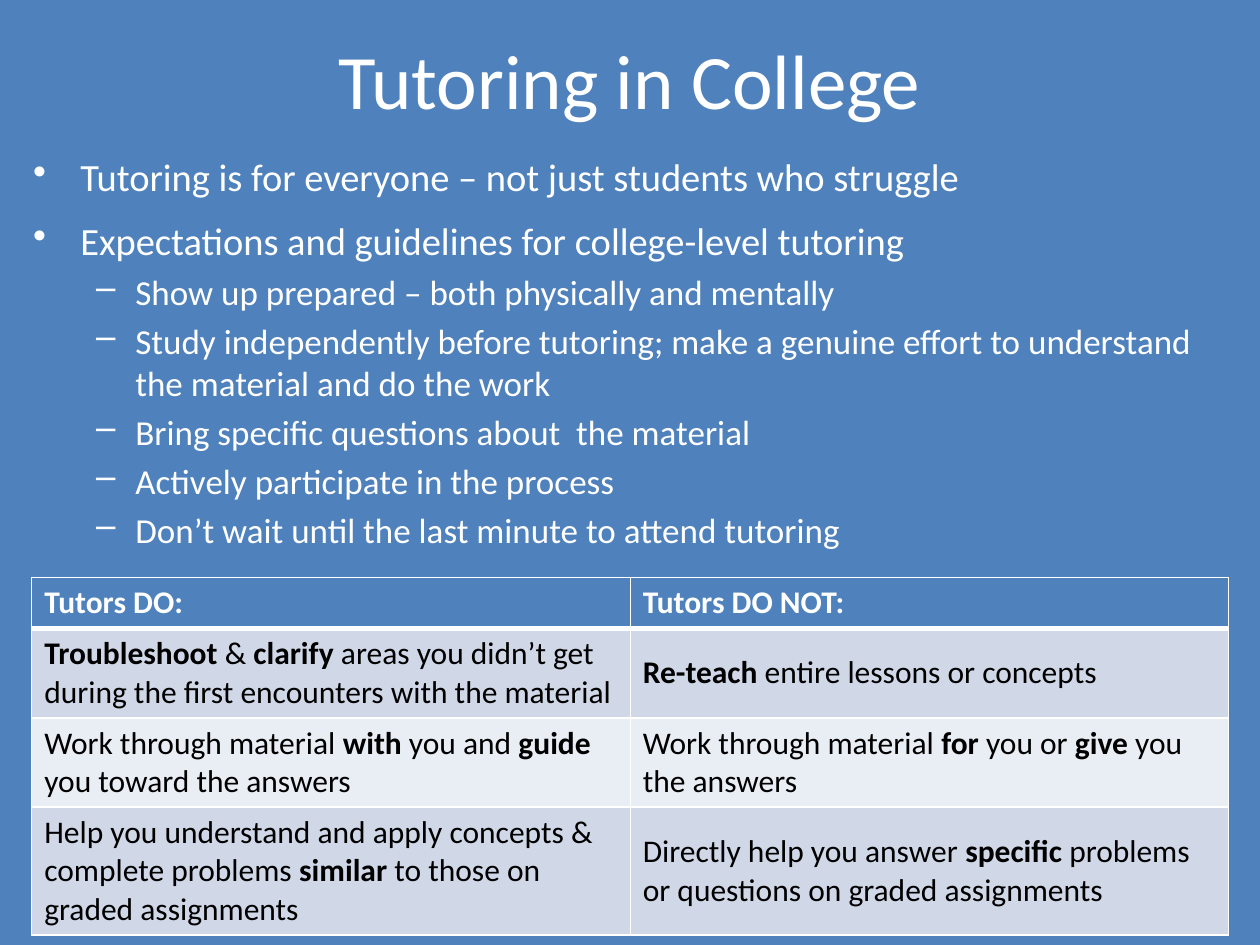
from lxml.etree import SubElement
from pptx import Presentation
from pptx.dml.color import RGBColor
from pptx.enum.text import MSO_ANCHOR, PP_ALIGN
from pptx.oxml.ns import qn
from pptx.util import Cm, Pt

FONT = "Calibri"
BLUE, WHITE, BLACK = "4F81BD", "FFFFFF", "000000"
BANDS = ("D0D8E8", "E9EDF4")

TITLE = "Tutoring in College"
# (level, text, space after in points)
BULLETS = [
    (0, "Tutoring is for everyone – not just students who struggle", 6),
    (0, "Expectations and guidelines for college-level tutoring", 0),
    (1, "Show up prepared – both physically and mentally", 0),
    (1, "Study independently before tutoring; make a genuine effort to "
        "understand the material and do the work", 0),
    (1, "Bring specific questions about  the material", 0),
    (1, "Actively participate in the process", 0),
    (1, "Don’t wait until the last minute to attend tutoring", 0),
]
# (symbol, text size, left margin, hanging indent) for each level
LEVELS = [("•", 22, Cm(0.95), Cm(0.95)), ("–", 20, Cm(2.06), Cm(0.79))]

# Text between asterisks is bold
TABLE = [
    ("*Tutors DO:*", "*Tutors DO NOT:*"),
    ("*Troubleshoot* & *clarify* areas you didn’t get during the first "
     "encounters with the material",
     "*Re-teach* entire lessons or concepts"),
    ("Work through material *with* you and *guide* you toward the answers",
     "Work through material *for* you or *give* you the answers"),
    ("Help you understand and apply concepts & complete problems *similar* "
     "to those on graded assignments",
     "Directly help you answer *specific* problems or questions on graded "
     "assignments"),
]
ROW_HEIGHTS = [Cm(1.03), Cm(1.8), Cm(1.8), Cm(2.58)]


def color(value):
    return RGBColor.from_string(value)


def set_font(paragraph, size, value):
    paragraph.font.name = FONT
    paragraph.font.size = Pt(size)
    paragraph.font.color.rgb = color(value)


def add_text_box(slide, left, top, width, height):
    text_frame = slide.shapes.add_textbox(left, top, width, height).text_frame
    text_frame.word_wrap = True
    return text_frame


def add_title(slide):
    text_frame = add_text_box(slide, Cm(1.27), Cm(0), Cm(22.86), Cm(3.18))
    text_frame.vertical_anchor = MSO_ANCHOR.MIDDLE
    paragraph = text_frame.paragraphs[0]
    paragraph.text = TITLE
    paragraph.alignment = PP_ALIGN.CENTER
    set_font(paragraph, 44, WHITE)


def add_bullets(slide):
    text_frame = add_text_box(slide, Cm(0.42), Cm(2.96), Cm(24.57), Cm(8.89))
    for index, (level, text, space_after) in enumerate(BULLETS):
        symbol, size, margin, hanging = LEVELS[level]
        paragraph = text_frame.add_paragraph() if index else text_frame.paragraphs[0]
        paragraph.text = text
        paragraph.level = level
        paragraph.space_before = Pt(size * 0.2)
        paragraph.space_after = Pt(space_after)
        set_font(paragraph, size, WHITE)
        properties = paragraph._p.get_or_add_pPr()
        properties.set("marL", str(margin))
        properties.set("indent", str(-hanging))
        bullet = properties.makeelement(qn("a:buChar"), {"char": symbol})
        properties.find(qn("a:defRPr")).addprevious(bullet)


def set_borders(cell, widths):
    """Draw white borders; widths maps each side (L, R, T, B) to points."""
    properties = cell._tc.get_or_add_tcPr()
    for position, (side, width) in enumerate(widths.items()):
        line = properties.makeelement(qn(f"a:ln{side}"), {"w": str(Pt(width))})
        fill = SubElement(line, qn("a:solidFill"))
        SubElement(fill, qn("a:srgbClr"), val=WHITE)
        properties.insert(position, line)


def fill_cell(cell, text, row):
    header = row == 0
    cell.fill.solid()
    cell.fill.fore_color.rgb = color(BLUE if header else BANDS[(row - 1) % 2])
    cell.vertical_anchor = MSO_ANCHOR.TOP if header else MSO_ANCHOR.MIDDLE
    paragraph = cell.text_frame.paragraphs[0]
    set_font(paragraph, 18, WHITE if header else BLACK)
    for index, part in enumerate(text.split("*")):
        if part:
            run = paragraph.add_run()
            run.text = part
            run.font.bold = index % 2 == 1
            run.font.name = FONT
            run.font.size = Pt(18)
            run.font.color.rgb = color(WHITE if header else BLACK)
    set_borders(cell, {"L": 1, "R": 1, "T": 3 if row == 1 else 1,
                       "B": 3 if header else 1})


def add_comparison(slide):
    table = slide.shapes.add_table(
        len(TABLE), len(TABLE[0]), Cm(0.64), Cm(11.64), Cm(24.13),
        sum(ROW_HEIGHTS)).table
    for row, texts in enumerate(TABLE):
        table.rows[row].height = ROW_HEIGHTS[row]
        for column, text in enumerate(texts):
            fill_cell(table.cell(row, column), text, row)


def main():
    presentation = Presentation()
    presentation.slide_width, presentation.slide_height = Cm(25.4), Cm(19.05)
    slide = presentation.slides.add_slide(presentation.slide_layouts[6])
    slide.background.fill.solid()
    slide.background.fill.fore_color.rgb = color(BLUE)
    add_title(slide)
    add_bullets(slide)
    add_comparison(slide)
    presentation.save("out.pptx")


if __name__ == "__main__":
    main()
